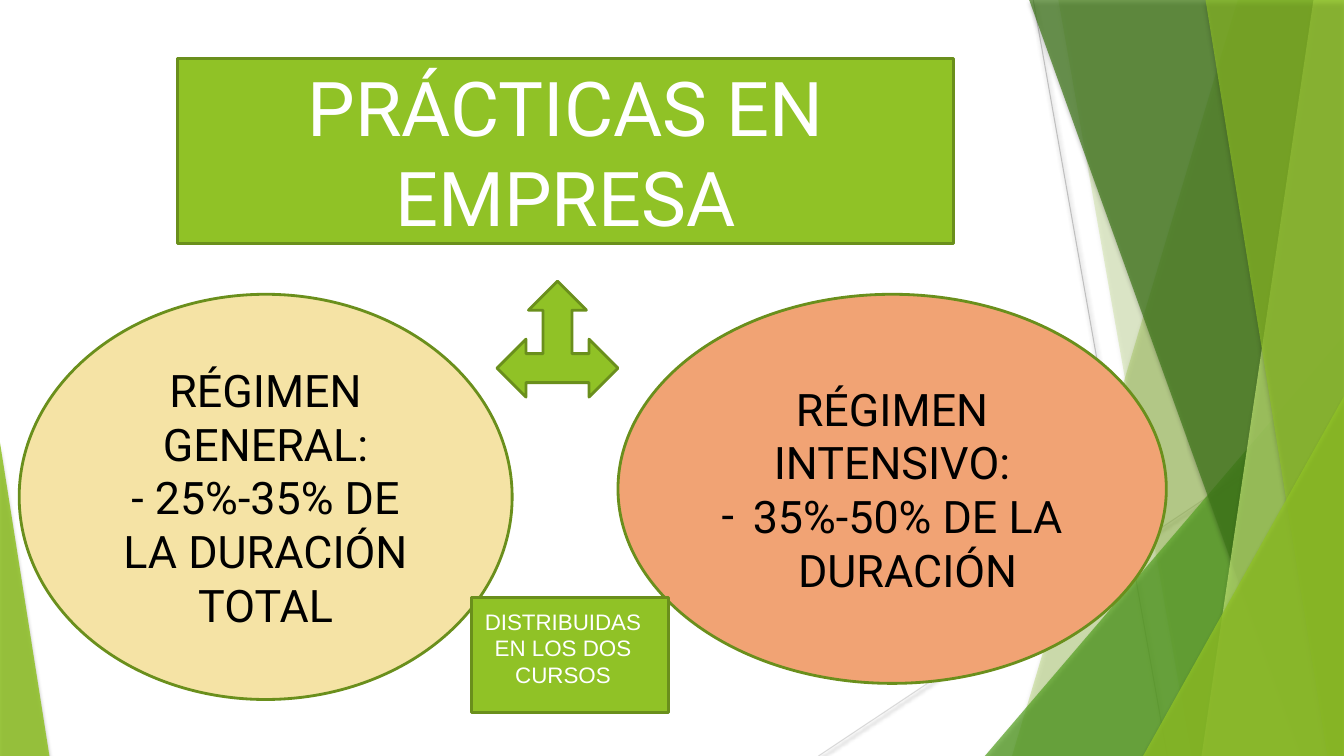
"""Build the slide about company placements and their two regimes."""
from dataclasses import dataclass

from lxml import etree
from pptx import Presentation
from pptx.dml.color import RGBColor
from pptx.enum.shapes import MSO_CONNECTOR, MSO_SHAPE
from pptx.enum.text import MSO_ANCHOR, PP_ALIGN
from pptx.oxml.ns import qn
from pptx.util import Inches, Pt

RECTANGLE, ELLIPSE = MSO_SHAPE.RECTANGLE, MSO_SHAPE.OVAL
TRIANGLE, THREE_WAY_ARROW = MSO_SHAPE.ISOSCELES_TRIANGLE, MSO_SHAPE.LEFT_RIGHT_UP_ARROW
STRAIGHT = MSO_CONNECTOR.STRAIGHT
CENTER, MIDDLE, TOP = PP_ALIGN.CENTER, MSO_ANCHOR.MIDDLE, MSO_ANCHOR.TOP
WIDTH, HEIGHT = Inches(13.333), Inches(7.5)


@dataclass(frozen=True)
class Theme:
    green: str = "90C226"
    mid_green: str = "54A021"
    dark_green: str = "3F7819"
    pale_green: str = "C0E474"
    outline: str = "6A8F1C"
    cream: str = "F5E3A5"
    orange: str = "F1A374"
    gray: str = "BFBFBF"
    light_gray: str = "D9D9D9"
    white: str = "FFFFFF"
    black: str = "000000"
    main_font: str = "Roboto"
    note_font: str = "Arial"
    title_size: int = 54
    body_size: int = 32
    note_size: int = 16
    outline_width: float = 2
    hairline: float = 0.75


THEME = Theme()


@dataclass(frozen=True)
class Area:
    """Place on the slide in percent of its width and height."""
    left: float
    top: float
    width: float
    height: float

    def lengths(self) -> tuple[int, int, int, int]:
        return across(self.left), down(self.top), across(self.width), down(self.height)


@dataclass(frozen=True)
class Ray:
    start: tuple[float, float]
    end: tuple[float, float]
    color: str


@dataclass(frozen=True)
class Strip:
    """Facet between a slanted left edge and the slide's right side."""
    top_left: float
    bottom_left: float
    color: str
    opacity: int


@dataclass(frozen=True)
class Wedge:
    """Triangle standing on the slide's bottom, with its apex at a share of its width."""
    left: float
    top: float
    width: float
    apex: float
    color: str
    opacity: int


@dataclass(frozen=True)
class Panel:
    shape: MSO_SHAPE
    area: Area
    fill: str
    lines: tuple[str, ...] = ()
    size: int = THEME.body_size
    color: str = THEME.black
    dashed_from: int = 9


RAYS = (
    Ray((76.88, 0), (86.85, 100), THEME.gray),
    Ray((100, 53.73), (60.9, 100), THEME.light_gray),
)
FACETS = (
    Strip(92.1, 75.3, THEME.green, 30),
    Strip(78.75, 88.65, THEME.green, 20),
    Wedge(73.28, 44.4, 26.72, 1, THEME.mid_green, 72),
    Strip(76.58, 96.83, THEME.dark_green, 70),
    Strip(97.73, 89.4, THEME.pale_green, 70),
    Strip(89.7, 98.78, THEME.green, 65),
    Wedge(85.05, 52.4, 14.95, 1, THEME.green, 80),
    Wedge(0, 58.53, 3.68, 0, THEME.green, 85),
)
PANELS = (
    Panel(RECTANGLE, Area(13.2, 7.73, 57.75, 24.53), THEME.green,
          ("PRÁCTICAS EN EMPRESA",), THEME.title_size, THEME.white),
    Panel(ELLIPSE, Area(1.43, 38.93, 36.68, 53.6), THEME.cream,
          ("RÉGIMEN GENERAL:", "- 25%-35% DE LA DURACIÓN TOTAL")),
    Panel(ELLIPSE, Area(45.98, 38.93, 40.8, 51.47), THEME.orange,
          ("RÉGIMEN INTENSIVO:", "35%-50% DE LA DURACIÓN"), dashed_from=1),
    Panel(THREE_WAY_ARROW, Area(36.98, 37.2, 9, 15.33), THEME.green),
    Panel(RECTANGLE, Area(35.1, 79.07, 14.63, 15.2), THEME.green),
)
NOTE_AREA = Area(35.1, 79.73, 13.58, 12)


def across(percent: float) -> int:
    return round(WIDTH * percent / 100)


def down(percent: float) -> int:
    return round(HEIGHT * percent / 100)


def add_opacity(color_element, opacity: int) -> None:
    etree.SubElement(color_element, qn("a:alpha"), val=str(opacity * 1000))


def add_shadow(shape, opacity: int, blur: float, distance: float) -> None:
    effects = etree.SubElement(shape.element.spPr, qn("a:effectLst"))
    shadow = etree.SubElement(effects, qn("a:outerShdw"), blurRad=str(Pt(blur)),
                              dist=str(Pt(distance)), dir="5400000", rotWithShape="0")
    add_opacity(etree.SubElement(shadow, qn("a:srgbClr"), val=THEME.black), opacity)


def paint(shape, color: str) -> None:
    shape.fill.solid()
    shape.fill.fore_color.rgb = RGBColor.from_string(color)


def add_ray(page, ray: Ray) -> None:
    line = page.shapes.add_connector(STRAIGHT, across(ray.start[0]), down(ray.start[1]),
                                     across(ray.end[0]), down(ray.end[1]))
    line.line.color.rgb = RGBColor.from_string(ray.color)
    line.line.width = Pt(THEME.hairline)
    add_shadow(line, 38, 3.1, 1.6)


def add_facet(page, facet: Strip | Wedge) -> None:
    if isinstance(facet, Strip):
        builder = page.shapes.build_freeform(across(facet.top_left), 0)
        builder.add_line_segments([(WIDTH, 0), (WIDTH, HEIGHT),
                                   (across(facet.bottom_left), HEIGHT)])
        shape = builder.convert_to_shape()
    else:
        area = Area(facet.left, facet.top, facet.width, 100 - facet.top)
        shape = page.shapes.add_shape(TRIANGLE, *area.lengths())
        shape.adjustments[0] = facet.apex
    paint(shape, facet.color)
    add_opacity(shape.element.spPr.find(".//" + qn("a:srgbClr")), facet.opacity)
    shape.line.fill.background()
    add_shadow(shape, 35, 3, 2)


def add_dash(para, color: str) -> None:
    properties = para._p.get_or_add_pPr()
    properties.set("marL", str(Inches(0.31)))
    properties.set("indent", str(Inches(-0.31)))
    bullet_color = etree.SubElement(properties, qn("a:buClr"))
    etree.SubElement(bullet_color, qn("a:srgbClr"), val=color)
    etree.SubElement(properties, qn("a:buFont"), typeface=THEME.main_font)
    etree.SubElement(properties, qn("a:buChar"), char="-")


def write(box, lines: tuple[str, ...], *, size: int, color: str, font: str = THEME.main_font,
          anchor: MSO_ANCHOR = MIDDLE, dashed_from: int = 9) -> None:
    frame = box.text_frame
    frame.word_wrap = True
    frame.vertical_anchor = anchor
    for index, line in enumerate(lines):
        para = frame.add_paragraph() if index else frame.paragraphs[0]
        para.alignment = CENTER
        if index >= dashed_from:
            add_dash(para, color)
        span = para.add_run()
        span.text = line
        span.font.name, span.font.size = font, Pt(size)
        span.font.color.rgb = RGBColor.from_string(color)


def add_panel(page, panel: Panel) -> None:
    box = page.shapes.add_shape(panel.shape, *panel.area.lengths())
    box.shadow.inherit = False
    paint(box, panel.fill)
    box.line.color.rgb = RGBColor.from_string(THEME.outline)
    box.line.width = Pt(THEME.outline_width)
    if panel.lines:
        write(box, panel.lines, size=panel.size, color=panel.color,
              dashed_from=panel.dashed_from)


def main() -> None:
    deck = Presentation()
    deck.slide_width, deck.slide_height = WIDTH, HEIGHT
    page = deck.slides.add_slide(deck.slide_layouts[6])
    for ray in RAYS:
        add_ray(page, ray)
    for facet in FACETS:
        add_facet(page, facet)
    for panel in PANELS:
        add_panel(page, panel)
    note = page.shapes.add_textbox(*NOTE_AREA.lengths())
    write(note, ("DISTRIBUIDAS EN LOS DOS CURSOS",), size=THEME.note_size,
          color=THEME.white, font=THEME.note_font, anchor=TOP)
    deck.save("out.pptx")


if __name__ == "__main__":
    main()
